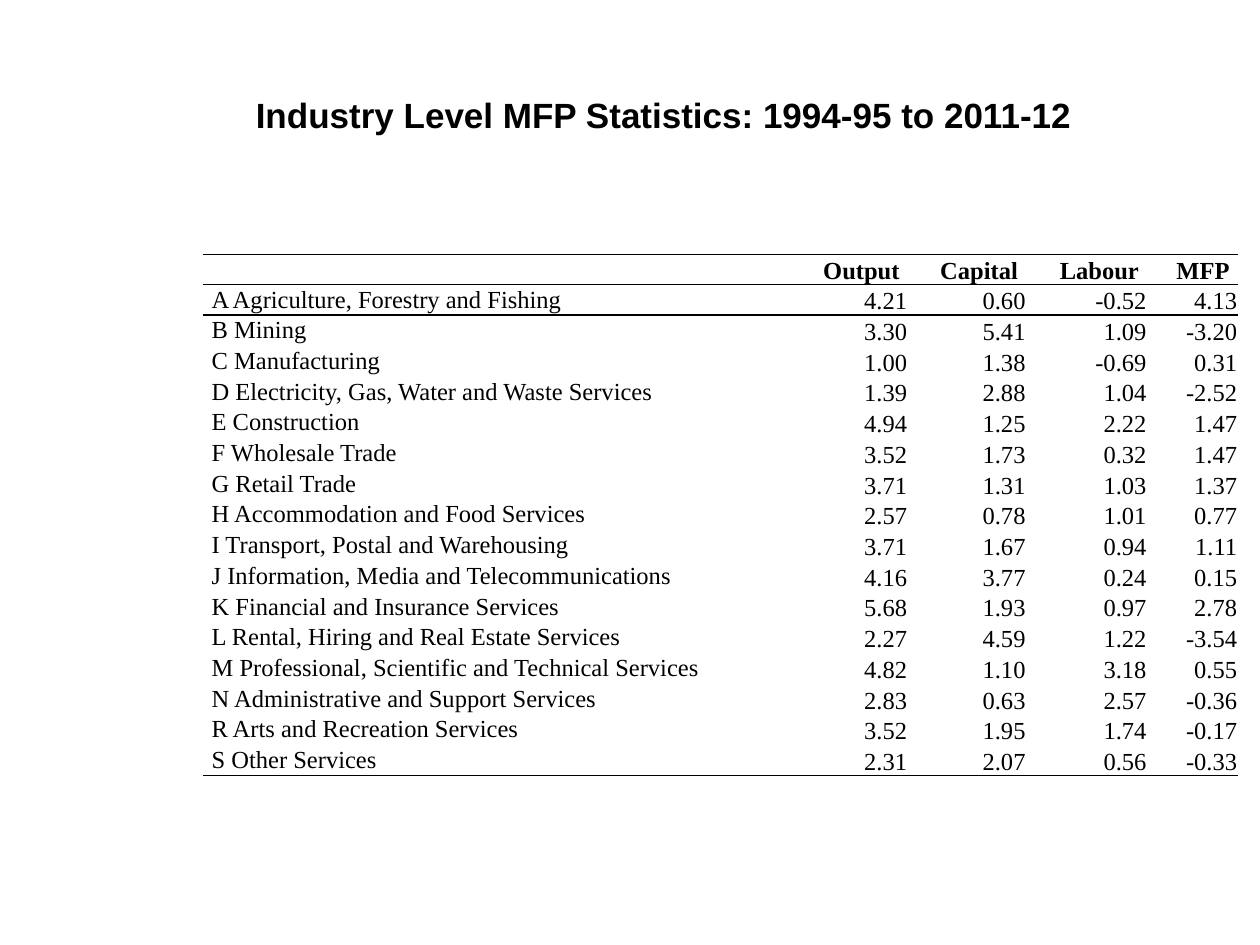
import pptx
import pptx.dml.color
import pptx.enum.text
import pptx.oxml
import pptx.oxml.ns
import pptx.util
from lxml import etree

Inches = pptx.util.Inches
Pt = pptx.util.Pt
qn = pptx.oxml.ns.qn
ALIGN = pptx.enum.text.PP_ALIGN
ANCHOR = pptx.enum.text.MSO_ANCHOR
BLACK = pptx.dml.color.RGBColor(0, 0, 0)
NO_STYLE = "{2D5ABB26-0587-4C30-8999-92F81FD0307C}"
BODY_SIZE = 14

HEADING = "Industry Level MFP Statistics: 1994-95 to 2011-12"
MEASURES = ("", "Output", "Capital", "Labour", "MFP")
INDUSTRIES = [
    ("A Agriculture, Forestry and Fishing", "4.21", "0.60", "-0.52", "4.13"),
    ("B Mining", "3.30", "5.41", "1.09", "-3.20"),
    ("C Manufacturing", "1.00", "1.38", "-0.69", "0.31"),
    ("D Electricity, Gas, Water and Waste Services", "1.39", "2.88", "1.04", "-2.52"),
    ("E Construction", "4.94", "1.25", "2.22", "1.47"),
    ("F Wholesale Trade", "3.52", "1.73", "0.32", "1.47"),
    ("G Retail Trade", "3.71", "1.31", "1.03", "1.37"),
    ("H Accommodation and Food Services", "2.57", "0.78", "1.01", "0.77"),
    ("I Transport, Postal and Warehousing", "3.71", "1.67", "0.94", "1.11"),
    ("J Information, Media and Telecommunications", "4.16", "3.77", "0.24", "0.15"),
    ("K Financial and Insurance Services", "5.68", "1.93", "0.97", "2.78"),
    ("L Rental, Hiring and Real Estate Services", "2.27", "4.59", "1.22", "-3.54"),
    ("M Professional, Scientific and Technical Services", "4.82", "1.10", "3.18", "0.55"),
    ("N Administrative and Support Services", "2.83", "0.63", "2.57", "-0.36"),
    ("R Arts and Recreation Services", "3.52", "1.95", "1.74", "-0.17"),
    ("S Other Services", "2.31", "2.07", "0.56", "-0.33"),
]
COLUMN_WIDTHS = (4.67, 0.93, 0.94, 0.96, 0.72)
TABLE_LEFT, TABLE_TOP, TABLE_HEIGHT, HEADER_HEIGHT = 1.61, 2.02, 4.13, 0.23


def add_run(paragraph, text, font_name, size, bold):
    run = paragraph.add_run()
    run.text = text
    run.font.name = font_name
    run.font.size = Pt(size)
    run.font.bold = bold
    run.font.color.rgb = BLACK


def add_border(cell, edge):
    border = etree.SubElement(cell._tc.get_or_add_tcPr(), qn(f"a:{edge}"), w=str(Pt(1)))
    fill = etree.SubElement(border, qn("a:solidFill"))
    etree.SubElement(fill, qn("a:srgbClr"), val=str(BLACK))


def fill_cell(cell, text, row, column, last_row):
    is_value = row > 0 and column > 0
    cell.margin_left = cell.margin_right = Inches(0.01 if is_value else 0.07)
    cell.margin_top = Inches(0.01 if is_value else 0)
    cell.margin_bottom = 0
    cell.vertical_anchor = ANCHOR.MIDDLE if row and not column else ANCHOR.BOTTOM
    if row in (0, 1):
        add_border(cell, "lnT")
    if row in (0, last_row):
        add_border(cell, "lnB")
    cell.fill.background()
    paragraph = cell.text_frame.paragraphs[0]
    paragraph.alignment = ALIGN.RIGHT if column else ALIGN.LEFT
    if text:
        add_run(paragraph, text, "Times New Roman", BODY_SIZE, row == 0)
    else:
        etree.SubElement(paragraph._p, qn("a:endParaRPr"), sz=str(BODY_SIZE * 100))


def add_statistics(slide):
    rows = [MEASURES, *INDUSTRIES]
    frame = slide.shapes.add_table(
        len(rows), len(MEASURES), Inches(TABLE_LEFT), Inches(TABLE_TOP),
        Inches(sum(COLUMN_WIDTHS)), Inches(TABLE_HEIGHT))
    frame.element.find(".//" + qn("a:tableStyleId")).text = NO_STYLE
    statistics = frame.table
    statistics.first_row = statistics.horz_banding = False
    for column, width in zip(statistics.columns, COLUMN_WIDTHS):
        column.width = Inches(width)
    industry_height = (TABLE_HEIGHT - HEADER_HEIGHT) / len(INDUSTRIES)
    for r, values in enumerate(rows):
        statistics.rows[r].height = Inches(industry_height if r else HEADER_HEIGHT)
        for c, text in enumerate(values):
            fill_cell(statistics.cell(r, c), text, r, c, len(INDUSTRIES))


def main():
    deck = pptx.Presentation()
    deck.slide_width, deck.slide_height = Inches(10), Inches(7.5)
    slide = deck.slides.add_slide(deck.slide_layouts[5])
    heading = slide.shapes.title
    heading.left, heading.top = Inches(1.93), Inches(0.28)
    heading.width, heading.height = Inches(7.65), Inches(1.25)
    heading.text_frame.vertical_anchor = ANCHOR.MIDDLE
    paragraph = heading.text_frame.paragraphs[0]
    paragraph.alignment = ALIGN.LEFT
    add_run(paragraph, HEADING, "Arial", 20, True)
    add_statistics(slide)
    deck.save("out.pptx")


if __name__ == "__main__":
    main()
